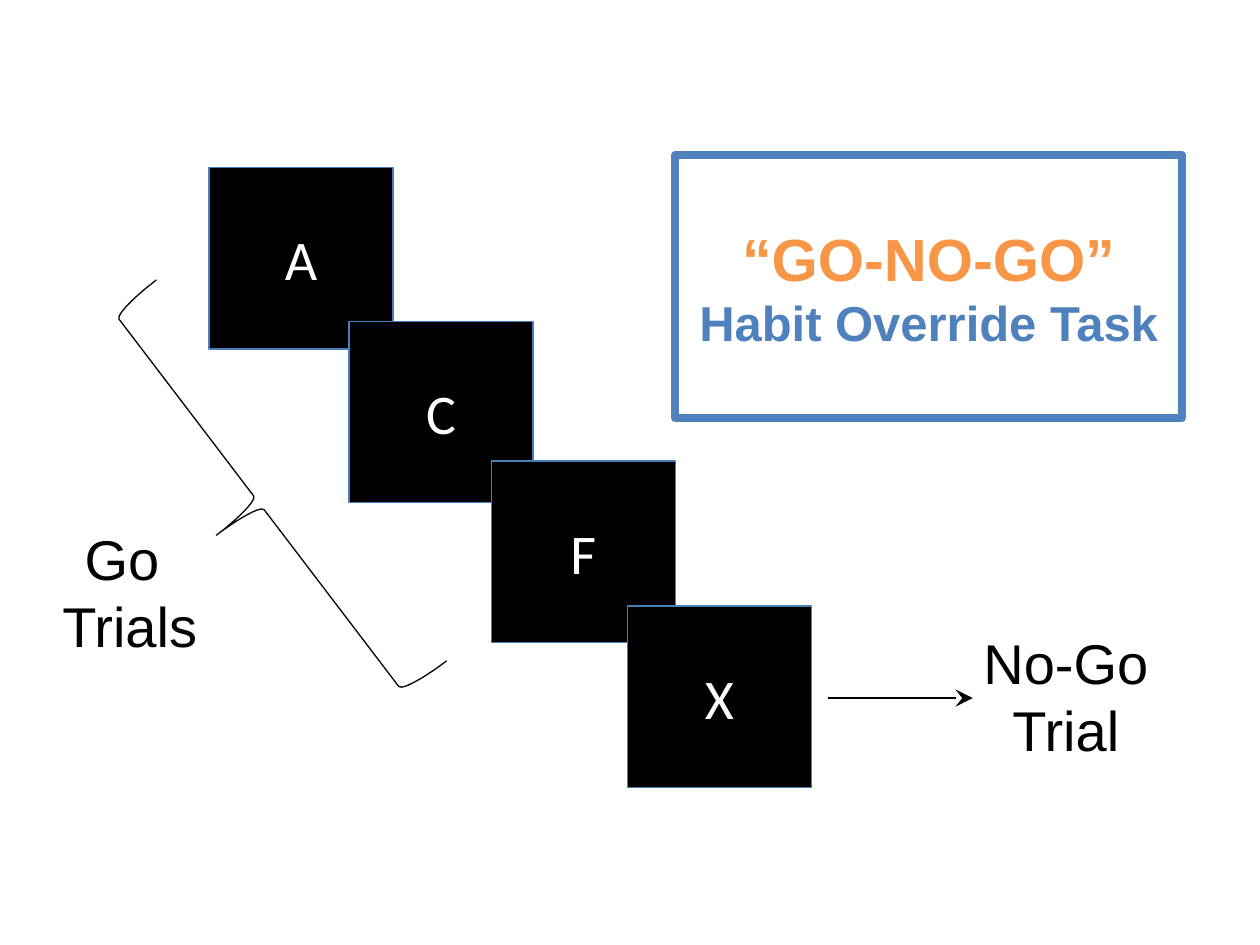
from lxml.etree import SubElement
from pptx import Presentation
from pptx.dml.color import RGBColor
from pptx.enum.shapes import MSO_CONNECTOR, MSO_SHAPE
from pptx.enum.text import MSO_ANCHOR, MSO_AUTO_SIZE, PP_ALIGN
from pptx.oxml.ns import qn
from pptx.util import Inches, Pt

WIDTH, HEIGHT = Inches(10), Inches(7.5)
BLUE, ORANGE, BLACK, WHITE = "4F81BD", "F79646", "000000", "FFFFFF"
STIMULUS_EDGE = "4A7DBB"
STIMULI = {"A": (16.6, 17.73), "C": (27.7, 34), "F": (39, 48.8), "X": (49.8, 64.13)}
STIMULUS_SIZE = (14.6, 19.2)
LABEL_SIZE = (20, 15.73)
STIMULUS_FONT = {"name": "Calibri", "size": Pt(32), "bold": False}
LABEL_FONT = {"name": "Arial", "size": Pt(32), "bold": False}
TASK_FONT = {"name": "Arial", "size": Pt(34), "bold": True}
SUBTITLE_FONT = {**TASK_FONT, "size": Pt(28)}


def shares(*percents):
    """Turn alternating x and y percentages of the slide into lengths."""
    return [round((HEIGHT if i % 2 else WIDTH) * p / 100) for i, p in enumerate(percents)]


def paint(color_format, color):
    """Give a colour format a hex colour."""
    color_format.rgb = RGBColor.from_string(color)


def outline(line, color, width):
    """Set the colour and width of a line."""
    paint(line.color, color)
    line.width = Pt(width)


def write(frame, lines, anchor=MSO_ANCHOR.TOP):
    """Write centred lines, each given as text, font values and colour."""
    frame.word_wrap = True
    frame.auto_size = MSO_AUTO_SIZE.NONE
    frame.vertical_anchor = anchor
    for index, (text, values, color) in enumerate(lines):
        paragraph = frame.add_paragraph() if index else frame.paragraphs[0]
        paragraph.alignment = PP_ALIGN.CENTER
        run = paragraph.add_run()
        run.text = text
        for key, value in values.items():
            setattr(run.font, key, value)
        paint(run.font.color, color)


def add_stimulus(slide, letter, corner):
    """Add a black screen that shows one letter."""
    screen = slide.shapes.add_shape(MSO_SHAPE.RECTANGLE, *shares(*corner, *STIMULUS_SIZE))
    screen.shadow.inherit = False
    screen.fill.solid()
    paint(screen.fill.fore_color, BLACK)
    outline(screen.line, STIMULUS_EDGE, 0.75)
    write(screen.text_frame, [(letter, STIMULUS_FONT, WHITE)], MSO_ANCHOR.MIDDLE)


def add_brace(slide):
    """Add the tilted brace that groups the go trials."""
    brace = slide.shapes.add_shape(MSO_SHAPE.LEFT_BRACE, *shares(16.3, 27.87, 8.5, 50.67))
    brace.shadow.inherit = False
    brace.rotation = 322.7
    brace.adjustments[0] = 0.08
    brace.fill.background()
    outline(brace.line, BLACK, 0.75)


def add_label(slide, corner, *lines):
    """Add a trial label."""
    label = slide.shapes.add_textbox(*shares(*corner, *LABEL_SIZE))
    write(label.text_frame, [(text, LABEL_FONT, BLACK) for text in lines])


def add_arrow(slide):
    """Add the arrow from the last stimulus to its label."""
    arrow = slide.shapes.add_connector(
        MSO_CONNECTOR.STRAIGHT, *shares(65.7, 73.87, 77.2, 73.87))
    outline(arrow.line, BLACK, 0.75)
    SubElement(arrow.line._get_or_add_ln(), qn("a:tailEnd"), type="stealth", w="lg", len="lg")
    SubElement(arrow._element.spPr, qn("a:effectLst"))


def place_title(slide):
    """Frame the task name in the title placeholder."""
    title = slide.shapes.title
    title.left, title.top, title.width, title.height = shares(53.6, 16.4, 40.2, 27.87)
    outline(title.line, BLUE, 4.5)
    write(title.text_frame,
          [("“GO-NO-GO”", TASK_FONT, ORANGE), ("Habit Override Task", SUBTITLE_FONT, BLUE)],
          MSO_ANCHOR.MIDDLE)


def main():
    """Build and save the slide."""
    deck = Presentation()
    deck.slide_width, deck.slide_height = WIDTH, HEIGHT
    slide = deck.slides.add_slide(deck.slide_layouts[5])
    for letter, corner in STIMULI.items():
        add_stimulus(slide, letter, corner)
    add_brace(slide)
    add_label(slide, (0.3, 54.8), "Go ", "Trials")
    add_arrow(slide)
    add_label(slide, (74.6, 65.87), "No-Go Trial")
    place_title(slide)
    deck.save("out.pptx")


if __name__ == "__main__":
    main()
